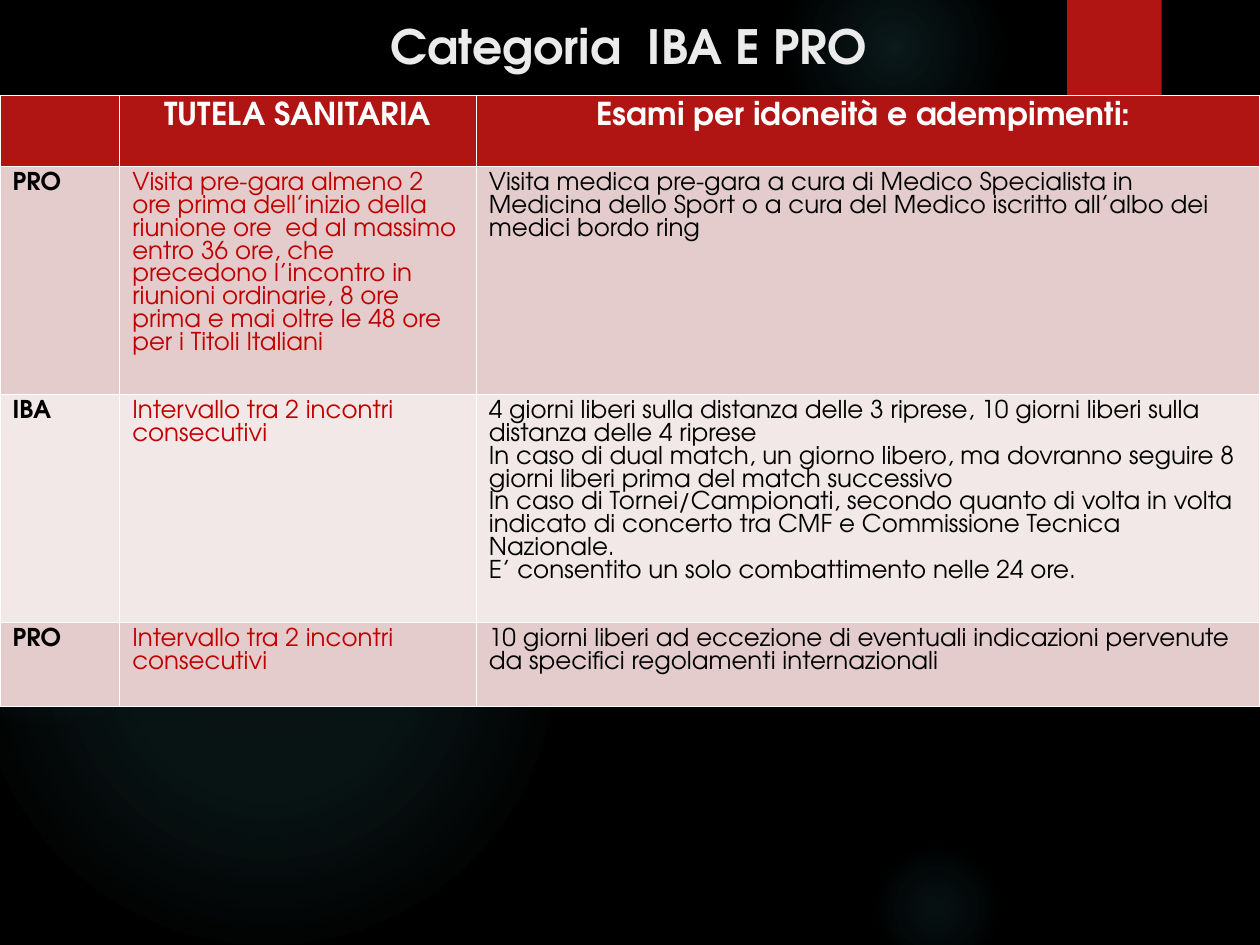
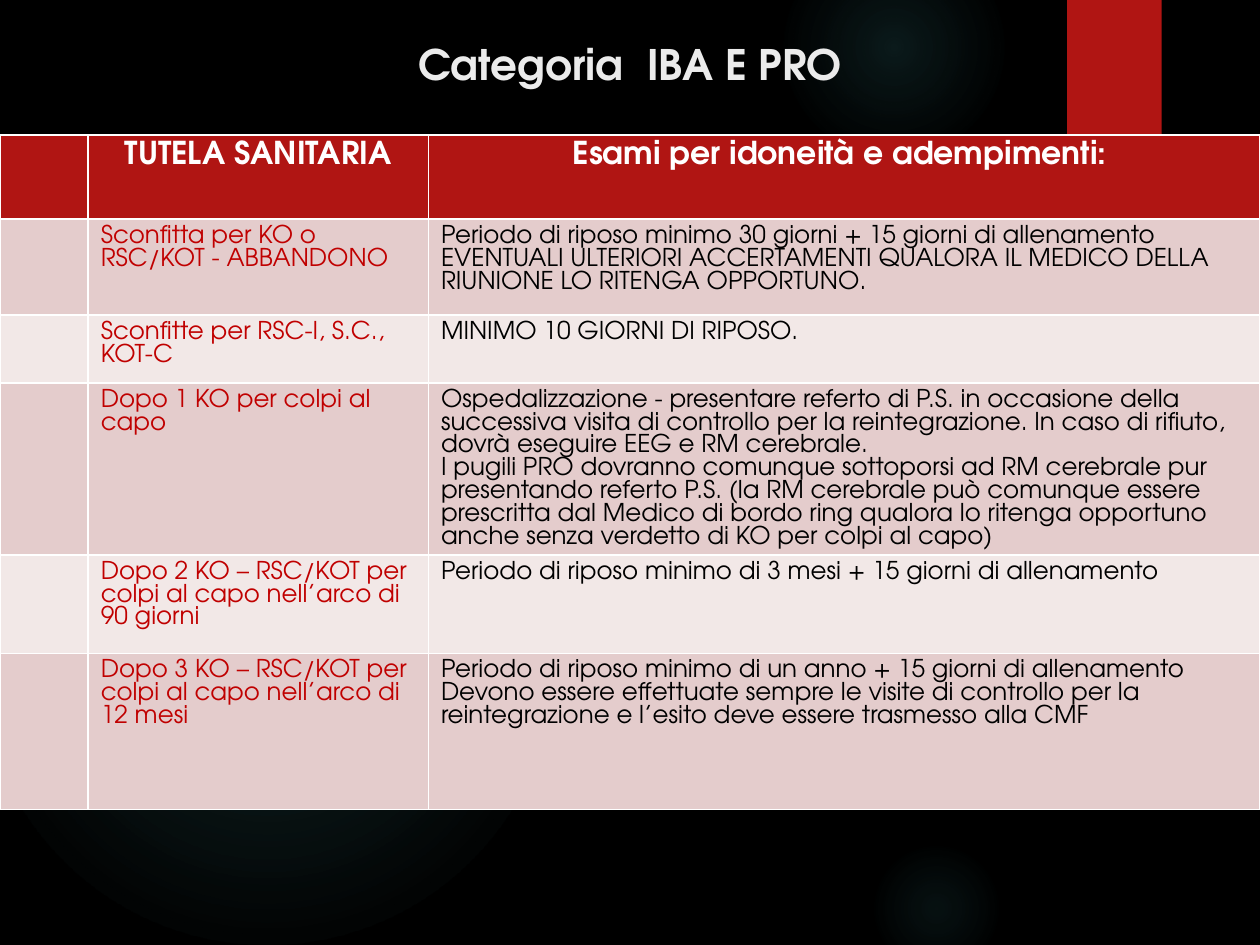
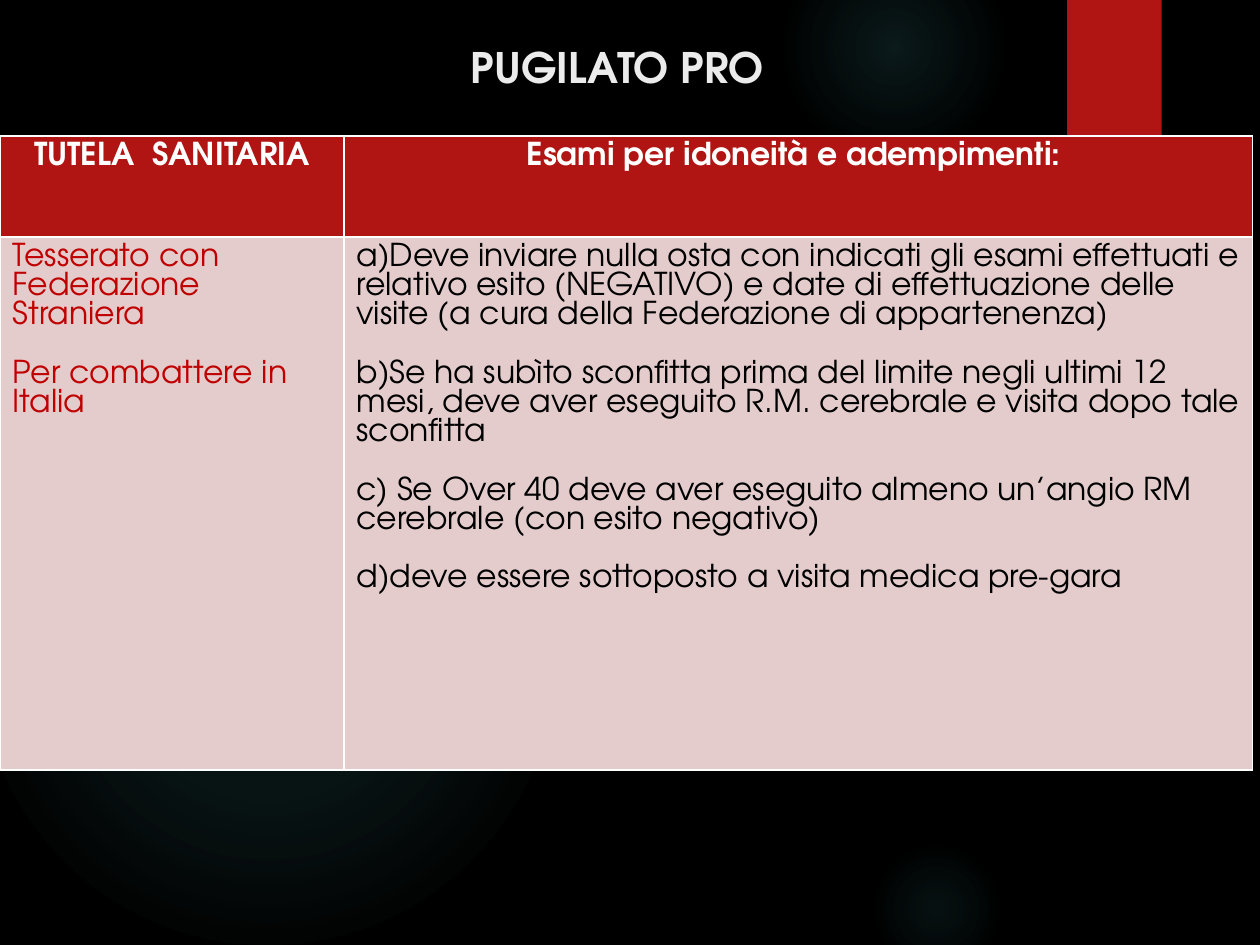
import pptx
import pptx.util
import pptx.dml.color
import pptx.enum.shapes
import pptx.enum.text
import pptx.oxml
import pptx.oxml.ns

FONT = "TeX Gyre Adventor"
BLACK, WHITE, PALE = "000000", "FFFFFF", "EBEBEB"
RED, DARK, GLOW = "B01513", "C00000", "50B9C1"
BANDS = ["E4CCCC", "F2E8E7"]
COLS = 100
LEAD = 0.93
GLOWS = [
    (68.9, 18.3, 30.8, [(0, 7), (36, 6), (69, 0)]),
    (62.2, -5, 17.5, [(0, 14), (36, 7), (73, 0)]),
    (68.9, 66.7, 10.8, [(0, 9), (36, 5), (66, 0)]),
    (-1.7, 29.2, 45.8, [(0, 11), (36, 10), (75, 0)]),
    (-9.2, 31.7, 25.8, [(0, 8), (36, 8), (72, 0)]),
]
EXAMS = "Esami per idoneità e adempimenti: "
PAUSE = "Intervallo tra 2 incontri consecutivi"


def tint(code):
    return pptx.dml.color.RGBColor.from_string(code)


class Deck:
    def __init__(self):
        self.file = pptx.Presentation()
        self.file.slide_width = pptx.util.Inches(10)
        self.file.slide_height = pptx.util.Inches(7.5)
        self.unit = self.file.slide_width / COLS

    def span(self, *marks):
        return [round(mark * self.unit) for mark in marks]

    def start(self, title, left, top, size):
        self.slide = self.file.slides.add_slide(self.file.slide_layouts[6])
        back = self.slide.background.fill
        back.solid()
        back.fore_color.rgb = tint(BLACK)
        for glow in GLOWS:
            self.glow(*glow)
        flag = self.shape("RECTANGLE", 84.7, 0, 7.5, 12)
        flag.fill.solid()
        flag.fill.fore_color.rgb = tint(RED)
        self.title(title, left, top, size)

    def shape(self, kind, *area):
        kind = pptx.enum.shapes.MSO_SHAPE[kind]
        shape = self.slide.shapes.add_shape(kind, *self.span(*area))
        shape.shadow.inherit = False
        shape.line.fill.background()
        return shape

    def glow(self, left, top, width, stops):
        shape = self.shape("OVAL", left, top, width, width)
        shape.fill.background()
        marks = "".join(
            f'<a:gs pos="{pos * 1000}"><a:srgbClr val="{GLOW}">'
            f'<a:alpha val="{alpha * 1000}"/></a:srgbClr></a:gs>'
            for pos, alpha in stops)
        fill = pptx.oxml.parse_xml(
            f'<a:gradFill {pptx.oxml.ns.nsdecls("a")} rotWithShape="1">'
            f'<a:gsLst>{marks}</a:gsLst><a:path path="circle">'
            '<a:fillToRect l="50000" t="50000" r="50000" b="50000"/>'
            '</a:path></a:gradFill>')
        props = shape._element.spPr
        props.replace(props.find(pptx.oxml.ns.qn("a:noFill")), fill)

    def title(self, text, left, top, size):
        area = self.span(left, top, 86.2, 14.5)
        frame = self.slide.shapes.add_textbox(*area).text_frame
        frame.word_wrap = True
        self.label(frame.paragraphs[0], text, size, PALE, True, True)

    def label(self, para, text, size, color, bold=False, center=False):
        para.text = text
        font = para.font
        font.name, font.size, font.bold = FONT, pptx.util.Pt(size), bold
        font.color.rgb = tint(color)
        if center:
            para.alignment = pptx.enum.text.PP_ALIGN.CENTER

    def cell(self, cell, fill, text, size, color, bold, center, gaps):
        cell.fill.solid()
        cell.fill.fore_color.rgb = tint(fill)
        frame = cell.text_frame
        for spot, line in enumerate(text.split("\n")):
            para = frame.add_paragraph() if spot else frame.paragraphs[0]
            self.label(para, line, size, color, bold, center)
            para.line_spacing = pptx.util.Pt(round(size * LEAD, 1))
            if spot in gaps:
                para.space_before = para.line_spacing

    def table(self, top, cols, rows, data, size, gaps):
        area = self.span(0, top, sum(cols), sum(rows))
        grid = self.slide.shapes.add_table(
            len(rows), len(cols), *area).table
        for col, width in zip(grid.columns, self.span(*cols)):
            col.width = width
        for row, height in zip(grid.rows, self.span(*rows)):
            row.height = height
        inks = [BLACK, DARK, BLACK][-len(cols):]
        for r, line in enumerate(data):
            for c, text in enumerate(line):
                head = r == 0
                tag = len(cols) == 3 and c == 0
                self.cell(
                    grid.cell(r, c),
                    RED if head else BANDS[(r - 1) % 2],
                    text,
                    18 if head else size,
                    WHITE if head else inks[c],
                    head or tag,
                    head,
                    gaps[c] if gaps else ())


def main():
    deck = Deck()

    deck.start("Categoria  IBA E PRO", 6.8, 0.9, 27)
    deck.table(7.6, [9.5, 28.3, 62.2], [5.6, 18.1, 18.1, 6.7], [
        ["", "TUTELA SANITARIA", EXAMS],
        ["PRO",
         "Visita pre-gara almeno 2 ore prima dell’inizio della riunione "
         "ore  ed al massimo entro 36 ore, che precedono l’incontro in "
         "riunioni ordinarie, 8 ore prima e mai oltre le 48 ore per i "
         "Titoli Italiani",
         "Visita medica pre-gara a cura di Medico Specialista in Medicina "
         "dello Sport o a cura del Medico iscritto all’albo dei medici "
         "bordo ring"],
        ["IBA", PAUSE,
         "4 giorni liberi sulla distanza delle 3 riprese, 10 giorni liberi "
         "sulla distanza delle 4 riprese\n"
         "In caso di dual match, un giorno libero, ma dovranno seguire 8 "
         "giorni liberi prima del match successivo\n"
         "In caso di Tornei/Campionati, secondo quanto di volta in volta "
         "indicato di concerto tra CMF e Commissione Tecnica Nazionale.\n"
         "E’ consentito un solo combattimento nelle 24 ore."],
        ["PRO", PAUSE,
         "10 giorni liberi ad eccezione di eventuali indicazioni pervenute "
         "da specifici regolamenti internazionali"],
    ], 14, None)

    deck.start("Categoria  IBA E PRO", 6.9, 2.6, 24)
    deck.table(10.7, [7, 27, 66], [6.7, 7.6, 5.4, 13.6, 7.8, 12.4], [
        ["", "TUTELA SANITARIA", EXAMS],
        ["", "Sconfitta per KO o RSC/KOT - ABBANDONO",
         "Periodo di riposo minimo 30 giorni + 15 giorni di allenamento\n"
         "EVENTUALI ULTERIORI ACCERTAMENTI QUALORA IL MEDICO DELLA "
         "RIUNIONE LO RITENGA OPPORTUNO."],
        ["", "Sconfitte per RSC-I, S.C., KOT-C",
         "MINIMO 10 GIORNI DI RIPOSO."],
        ["", "Dopo 1 KO per colpi al capo",
         "Ospedalizzazione - presentare referto di P.S. in occasione della "
         "successiva visita di controllo per la reintegrazione. In caso di "
         "rifiuto, dovrà eseguire EEG e RM cerebrale.\n"
         "I pugili PRO dovranno comunque sottoporsi ad RM cerebrale pur "
         "presentando referto P.S. (la RM cerebrale può comunque essere "
         "prescritta dal Medico di bordo ring qualora lo ritenga opportuno "
         "anche senza verdetto di KO per colpi al capo)"],
        ["", "Dopo 2 KO – RSC/KOT per colpi al capo nell’arco di 90 giorni",
         "Periodo di riposo minimo di 3 mesi + 15 giorni di allenamento"],
        ["", "Dopo 3 KO – RSC/KOT per colpi al capo nell’arco di 12 mesi",
         "Periodo di riposo minimo di un anno + 15 giorni di allenamento\n"
         "Devono essere effettuate sempre le visite di controllo per la "
         "reintegrazione e l’esito deve essere trasmesso alla CMF"],
    ], 14, None)

    deck.start("PUGILATO PRO", 5.9, 2.8, 24)
    deck.table(10.8, [27.3, 72.1], [8, 42.3], [
        ["TUTELA  SANITARIA", EXAMS],
        ["Tesserato con\nFederazione\nStraniera\nPer combattere in Italia",
         "a)Deve inviare nulla osta con indicati gli esami effettuati e "
         "relativo esito (NEGATIVO) e date di effettuazione delle visite "
         "(a cura della Federazione di appartenenza)\n"
         "b)Se ha subìto sconfitta prima del limite negli ultimi 12 mesi, "
         "deve aver eseguito R.M. cerebrale e visita dopo tale sconfitta\n"
         "c) Se Over 40 deve aver eseguito almeno un’angio RM cerebrale "
         "(con esito negativo)\n"
         "d)deve essere sottoposto a visita medica pre-gara"],
    ], 18, [(3,), (1, 2, 3)])

    deck.file.save("out.pptx")


if __name__ == "__main__":
    main()
